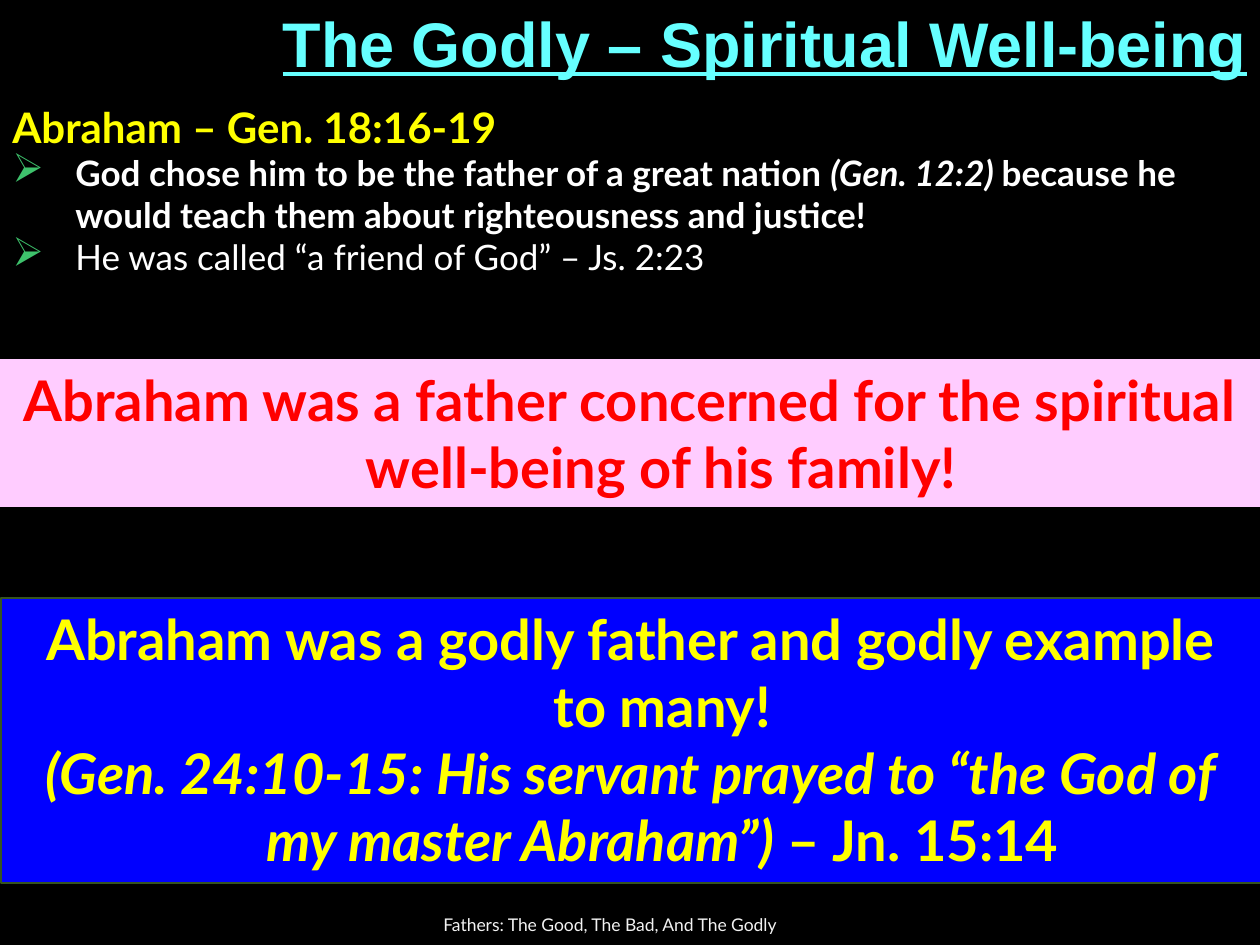
"""Builds the slide on Abraham as a godly father."""
from lxml import etree
from pptx import Presentation, util as u
from pptx.dml.color import RGBColor
from pptx.enum import shapes, text
from pptx.oxml import ns

THEME = dict(
    bg="000000", title="66FFFF", accent="FFFF00", body="FFFFFF", bullet="3EC26C",
    footer="F2F2F2", alert="FF0000", pink="FFCCFF", blue="0000FF", border="355420",
    head_font="Arial", body_font="Lato",
    title_pt=36, banner_pt=32, lead_pt=24, body_pt=20, footer_pt=10,
)
PX = 914400 / 126
INDENT = round(63 * PX)
LEFT, CENTER, RIGHT = text.PP_ALIGN.LEFT, text.PP_ALIGN.CENTER, text.PP_ALIGN.RIGHT
TOP, MIDDLE = text.MSO_ANCHOR.TOP, text.MSO_ANCHOR.MIDDLE


def color(name):
    return RGBColor.from_string(THEME[name])


def write(sp, paras, align=LEFT, anchor=TOP, font="body_font", hang=True):
    tf = sp.text_frame
    tf.word_wrap = True
    tf.vertical_anchor = anchor
    for i, (size, ink, bullet, runs) in enumerate(paras):
        p = tf.paragraphs[0] if i == 0 else tf.add_paragraph()
        p.alignment = align
        pPr = p._p.get_or_add_pPr()
        if hang:
            pPr.set("marL", str(INDENT))
            pPr.set("indent", str(-INDENT))
        if bullet:
            clr = etree.SubElement(pPr, ns.qn("a:buClr"))
            etree.SubElement(clr, ns.qn("a:srgbClr"), val=THEME["bullet"])
            etree.SubElement(pPr, ns.qn("a:buSzPct"), val="115000")
            etree.SubElement(pPr, ns.qn("a:buChar"), char="➢")
        for words, style in runs:
            r = p.add_run()
            r.text = words
            r.font.name = THEME[font]
            r.font.size = u.Pt(THEME[size])
            r.font.color.rgb = color(ink)
            r.font.bold = "b" in style
            r.font.italic = "i" in style
            r.font.underline = "u" in style


prs = Presentation()
prs.slide_width, prs.slide_height = u.Inches(10), u.Inches(7.5)
s = prs.slides.add_slide(prs.slide_layouts[6])
s.background.fill.solid()
s.background.fill.fore_color.rgb = color("bg")

TEXTS = [
    ((0, 0, 1260, 84), RIGHT, MIDDLE, "head_font", False, [
        ("title_pt", "title", False, [("The Godly – Spiritual Well-being", "bu")])]),
    ((431, 903, 399, 42), LEFT, MIDDLE, "body_font", False, [
        ("footer_pt", "footer", False, [("Fathers: The Good, The Bad, And The Godly", "")])]),
    ((0, 95, 1260, 190), LEFT, TOP, "body_font", True, [
        ("lead_pt", "accent", False, [("Abraham – Gen. 18:16-19", "b")]),
        ("body_pt", "body", True, [
            ("God chose him to be the father of a great nation ", "b"),
            ("(Gen. 12:2) ", "bi"),
            ("because he would teach them about righteousness and justice!", "b")]),
        ("body_pt", "body", True, [("He was called “a friend of God” – Js. 2:23", "")])]),
]
for box, align, anchor, font, hang, paras in TEXTS:
    sp = s.shapes.add_textbox(*(round(v * PX) for v in box))
    write(sp, paras, align, anchor, font, hang)

BANNERS = [
    ((0, 359, 1260, 148), "pink", None, [
        ("banner_pt", "alert", False, [
            ("Abraham was a father concerned for the spiritual well-being of his family!", "b")])]),
    ((1, 598, 1260, 285), "blue", "border", [
        ("banner_pt", "accent", False, [
            ("Abraham was a godly father and godly example to many!", "b")]),
        ("banner_pt", "accent", False, [
            ("(Gen. 24:10-15: His servant prayed to “the God of my master Abraham”)", "bi"),
            (" – Jn. 15:14", "b")])]),
]
for box, fill, line, paras in BANNERS:
    sp = s.shapes.add_shape(shapes.MSO_SHAPE.RECTANGLE, *(round(v * PX) for v in box))
    sp.shadow.inherit = False
    sp.fill.solid()
    sp.fill.fore_color.rgb = color(fill)
    if line:
        sp.line.color.rgb = color(line)
        sp.line.width = u.Pt(1.5)
    else:
        sp.line.fill.background()
    write(sp, paras, CENTER)

prs.save("out.pptx")
